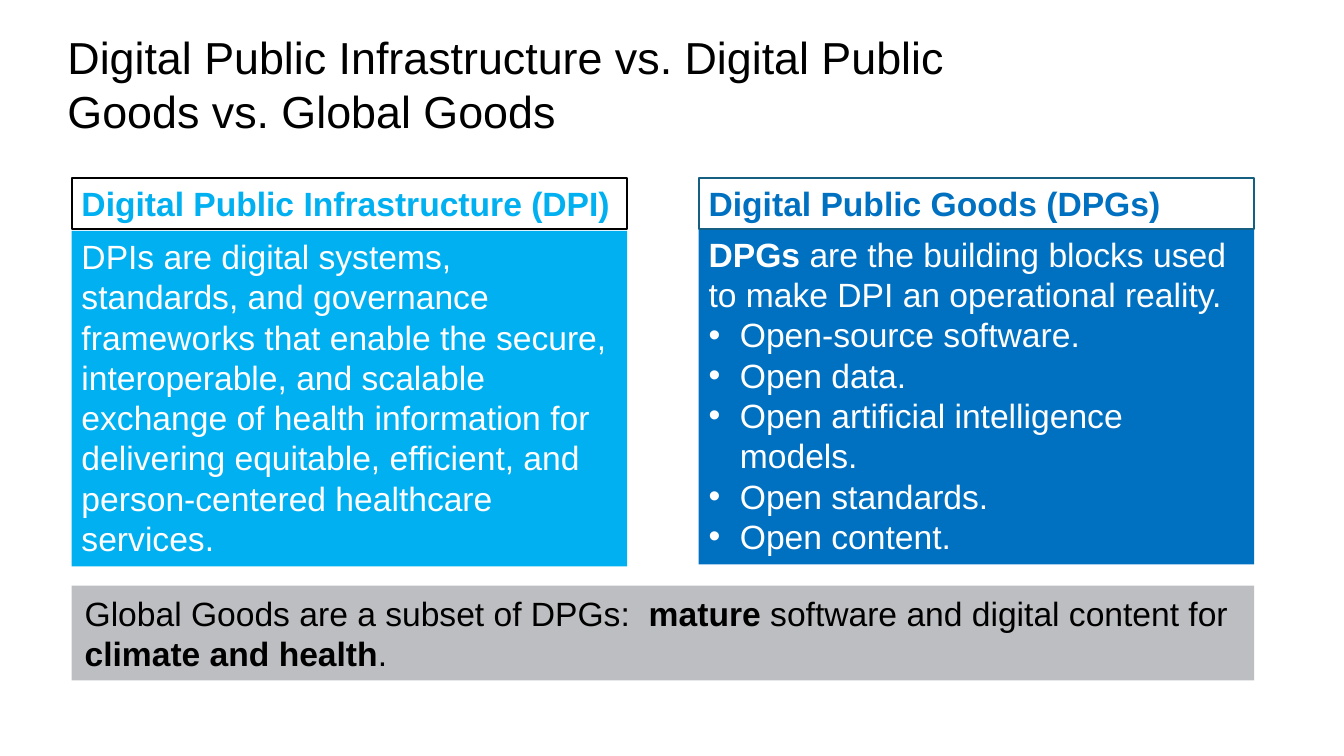
from dataclasses import dataclass

from lxml.etree import SubElement
from pptx import Presentation
from pptx.dml.color import RGBColor
from pptx.enum.shapes import MSO_SHAPE
from pptx.enum.text import MSO_ANCHOR, MSO_AUTO_SIZE, PP_ALIGN
from pptx.oxml.ns import qn
from pptx.slide import Slide
from pptx.text.text import TextFrame
from pptx.util import Emu, Pt

SCALE = 9144
INDENT = 31
COLORS = {
    "black": "000000",
    "white": "FFFFFF",
    "sky": "00B0F0",
    "blue": "0070C0",
    "teal": "156082",
    "gray": "BDBEC1",
}
FRAME = {
    "word_wrap": True,
    "auto_size": MSO_AUTO_SIZE.SHAPE_TO_FIT_TEXT,
    "vertical_anchor": MSO_ANCHOR.TOP,
}


@dataclass(frozen=True)
class Run:
    text: str
    bold: bool = False


@dataclass(frozen=True)
class Para:
    runs: tuple[Run, ...]
    bullet: bool = False


@dataclass(frozen=True)
class Box:
    left: int
    top: int
    width: int
    height: int
    paras: tuple[Para, ...]
    color: str
    fill: str = ""
    line: str = ""
    size: int = 24
    inset: tuple[int, int] = (10, 5)


@dataclass(frozen=True)
class Panel:
    left: int
    drop: int
    head: str
    tint: str
    edge: str
    body: tuple[Para, ...]


def px(count: int) -> Emu:
    return Emu(count * SCALE)


def rgb(name: str) -> RGBColor:
    return RGBColor.from_string(COLORS[name])


def apply(target: object, values: dict[str, object]) -> None:
    for name, value in values.items():
        setattr(target, name, value)


def plain(text: str, bold: bool = False, bullet: bool = False) -> Para:
    return Para((Run(text, bold),), bullet)


def write(frame: TextFrame, box: Box) -> None:
    side, edge = (px(gap) for gap in box.inset)
    apply(frame, FRAME | {
        "margin_left": side, "margin_right": side,
        "margin_top": edge, "margin_bottom": edge,
    })
    for index, para in enumerate(box.paras):
        item = frame.add_paragraph() if index else frame.paragraphs[0]
        item.alignment = PP_ALIGN.LEFT
        if para.bullet:
            props = item._p.get_or_add_pPr()
            props.set("marL", str(px(INDENT)))
            props.set("indent", str(-px(INDENT)))
            SubElement(props, qn("a:buFont")).set("typeface", "Arial")
            SubElement(props, qn("a:buChar")).set("char", "•")
        for run in para.runs:
            piece = item.add_run()
            piece.text = run.text
            apply(piece.font, {"name": "Arial", "size": Pt(box.size), "bold": run.bold})
            piece.font.color.rgb = rgb(box.color)


def draw(slide: Slide, box: Box) -> None:
    place = [px(side) for side in (box.left, box.top, box.width, box.height)]
    if not box.fill:
        write(slide.shapes.add_textbox(*place).text_frame, box)
        return
    shape = slide.shapes.add_shape(MSO_SHAPE.RECTANGLE, *place)
    shape.shadow.inherit = False
    shape.fill.solid()
    shape.fill.fore_color.rgb = rgb(box.fill)
    if box.line:
        shape.line.color.rgb = rgb(box.line)
        shape.line.width = Pt(1.5)
    else:
        shape.line.fill.background()
    write(shape.text_frame, box)


def build(slide: Slide, panel: Panel) -> None:
    top, width, height = 177, 551, 50
    draw(slide, Box(panel.left, top + height + panel.drop, width, 333,
                    panel.body, "white", panel.tint))
    draw(slide, Box(panel.left, top, width, height,
                    (plain(panel.head, True),), panel.tint, "white", panel.edge))


TITLE = Box(57, 25, 921, 118, (plain(
    "Digital Public Infrastructure vs. Digital Public Goods vs. Global Goods"),),
    "black", size=32)
GOODS = ("Open-source software.", "Open data.", "Open artificial intelligence models.",
         "Open standards.", "Open content.")
PANELS = (
    Panel(71, 2, "Digital Public Infrastructure (DPI)", "sky", "black", (plain(
        "DPIs are digital systems, standards, and governance frameworks that enable "
        "the secure, interoperable, and scalable exchange of health information for "
        "delivering equitable, efficient, and person-centered healthcare services."),)),
    Panel(693, 0, "Digital Public Goods (DPGs)", "blue", "teal", (
        Para((Run("DPGs ", True),
              Run("are the building blocks used to make DPI an operational reality."))),
        *(plain(good, bullet=True) for good in GOODS))),
)
NOTE = Box(71, 581, 1173, 94, (Para((
    Run("Global Goods are a subset of DPGs:"),
    Run("  mature ", True),
    Run("software and digital content for "),
    Run("climate and health", True),
    Run("."),
)),), "black", "gray", inset=(13, 7))


def main() -> None:
    deck = Presentation()
    apply(deck, {"slide_width": px(1333), "slide_height": px(750)})
    slide = deck.slides.add_slide(deck.slide_layouts[6])
    for panel in PANELS:
        build(slide, panel)
    for box in (NOTE, TITLE):
        draw(slide, box)
    deck.save("out.pptx")


if __name__ == "__main__":
    main()
